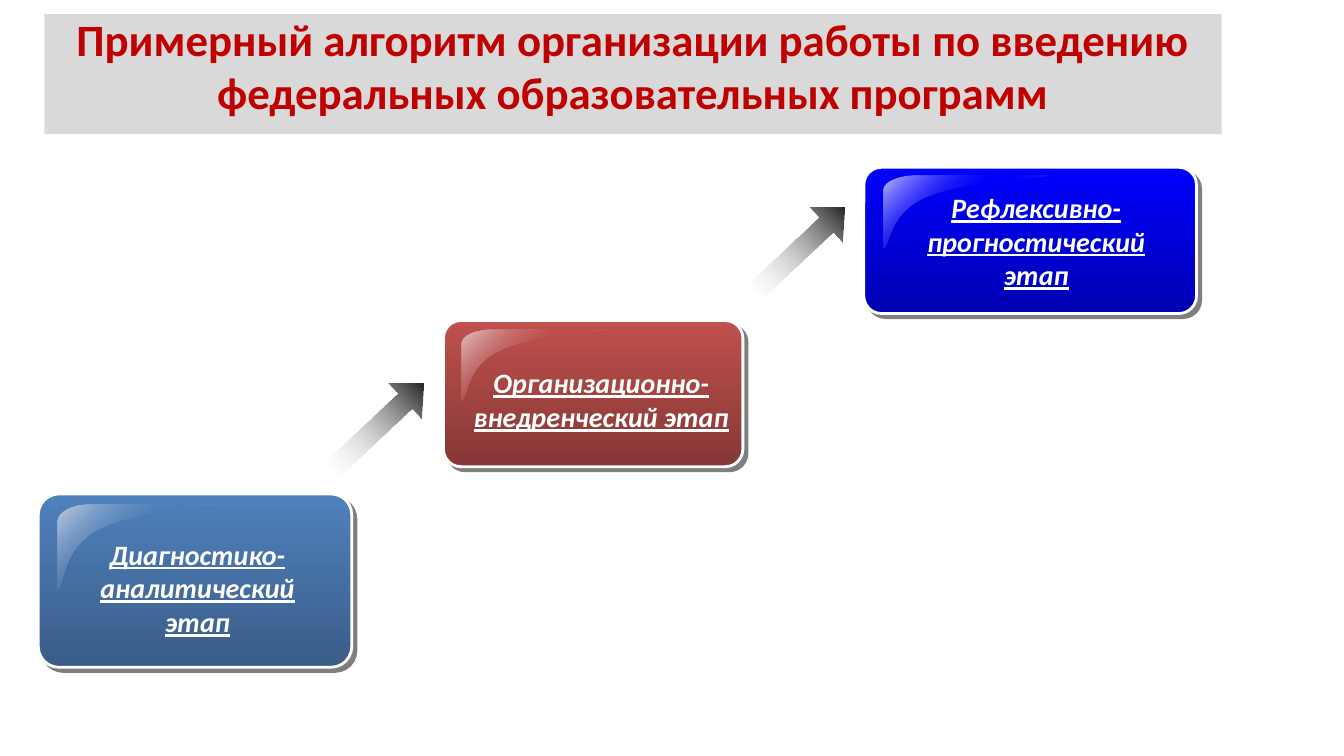
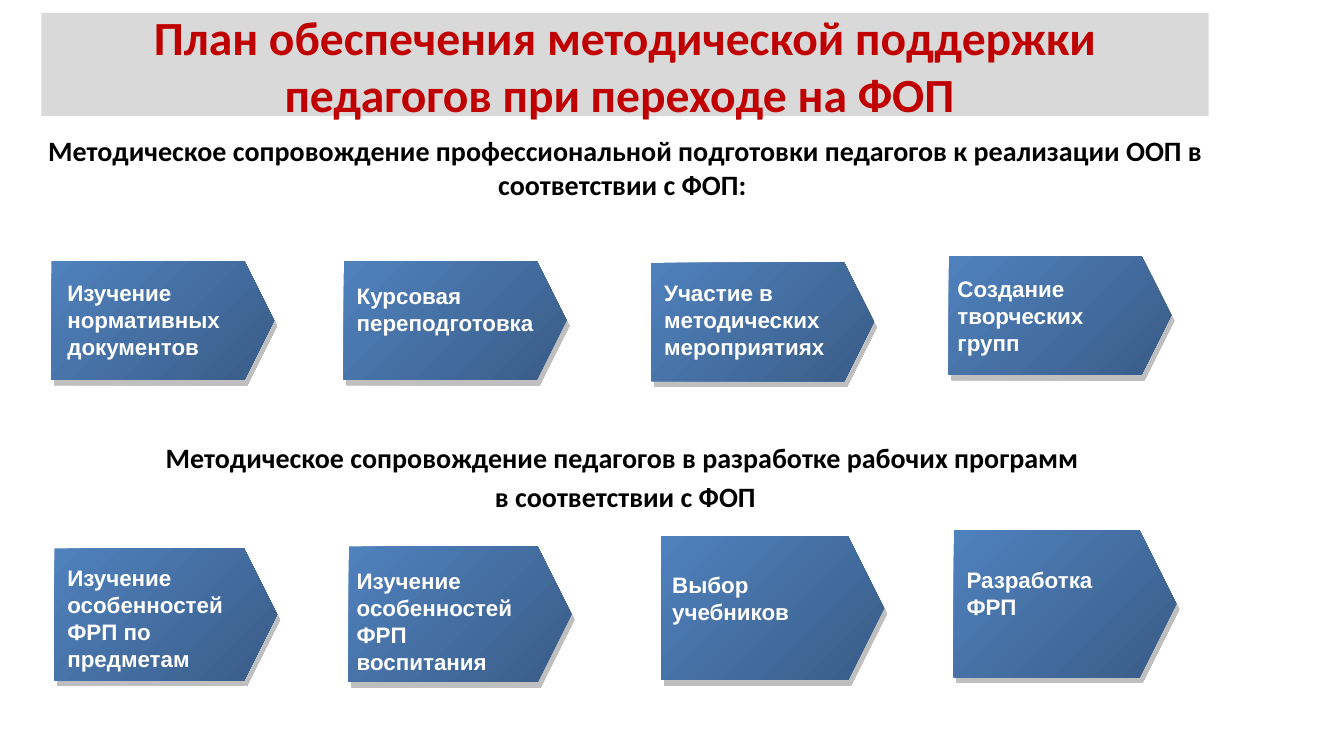
from dataclasses import dataclass
from typing import NamedTuple

from lxml.etree import SubElement
from pptx import Presentation
from pptx.dml.color import RGBColor
from pptx.enum.shapes import MSO_SHAPE
from pptx.enum.text import MSO_ANCHOR, PP_ALIGN
from pptx.oxml import parse_xml
from pptx.oxml.ns import nsdecls, qn
from pptx.util import Inches, Pt

COLORS = {
    "band": "D9D9D9", "title": "C00000", "text": "000000", "white": "FFFFFF",
    "shadow": "000000", "plate_shadow": "808080",
    "blue": "4F81BD", "blue_dark": "3A5C87", "blue_gloss": "C4CEE2",
    "red": "C0504D", "red_dark": "853836", "red_gloss": "E3C4C4",
    "pure": "0000FF", "pure_dark": "0000B2", "pure_gloss": "BFBFFF",
}
# The slide is a grid of COLS by ROWS square cells
COLS, ROWS = 133.33, 75
WIDTH, HEIGHT = Inches(13.33), Inches(7.5)


class Area(NamedTuple):
    """Place on the grid, in columns and rows."""
    col: float
    row: float
    cols: float
    rows: float

    def emu(self) -> tuple:
        return (x_at(self.col), y_at(self.row), x_at(self.cols), y_at(self.rows))


class Stop(NamedTuple):
    position: int
    color: str
    alpha: int = 100


@dataclass(frozen=True)
class TextStyle:
    size: float
    color: str
    font: str = "Calibri"
    italic: bool = False
    underline: bool = False
    shadow: bool = False
    align: PP_ALIGN = PP_ALIGN.CENTER
    gaps: tuple = ()  # space before each paragraph after the first


@dataclass(frozen=True)
class Stage:
    box: Area
    label_area: Area
    label: tuple
    color: str
    wrap: bool = True


@dataclass(frozen=True)
class Step:
    plate: Area
    label_col: float
    label_row: float
    label: str


STAGE_TEXT = TextStyle(20, "white", italic=True, underline=True, shadow=True)
HEADING_TEXT = TextStyle(20, "text", gaps=(171, 4))
STEP_TEXT = TextStyle(16, "white", font="Arial", align=PP_ALIGN.LEFT)

STAGES = (
    Stage(Area(3.8, 49, 31.1, 17.2), Area(6.2, 52.8, 26.8, 11.1),
          ("Диагностико-аналитический этап",), "blue"),
    Stage(Area(44, 31.8, 29.7, 14.5), Area(45.9, 35.8, 27.5, 7.7),
          ("Организационно-", "внедренческий этап"), "red", wrap=False),
    Stage(Area(85.7, 16.6, 33, 14.5), Area(88.2, 18.4, 29.2, 11.1),
          ("Рефлексивно-прогностический этап",), "pure"),
)
ARROWS = (Area(35.2, 36.2, 4.8, 12), Area(77, 18.7, 4.8, 12))

HEADINGS_AREA = Area(1.5, 12.8, 121.1, 62.2)
HEADINGS = (
    "Методическое сопровождение профессиональной подготовки педагогов "
    "к реализации ООП в соответствии с ФОП: ",
    "Методическое сопровождение педагогов в разработке рабочих программ ",
    "в соответствии с ФОП",
)
PLATE_COLS, LABEL_COLS = 22.1, 19.9
STEPS = (
    Step(Area(5.1, 25.9, PLATE_COLS, 11.75), 5.7, 27.2, "Изучение нормативных документов"),
    Step(Area(34.1, 25.9, PLATE_COLS, 11.75), 34.4, 27.5, "Курсовая переподготовка"),
    Step(Area(64.6, 26.05, PLATE_COLS, 11.75), 64.9, 27.2, "Участие в методических мероприятиях"),
    Step(Area(94.1, 25.4, PLATE_COLS, 11.75), 94, 26.8, "Создание творческих групп"),
    Step(Area(5.4, 54.4, PLATE_COLS, 13.1), 5.7, 55.5, "Изучение особенностей ФРП по предметам"),
    Step(Area(34.6, 54.2, PLATE_COLS, 13.45), 34.4, 55.8, "Изучение особенностей ФРП воспитания"),
    Step(Area(65.6, 53.2, PLATE_COLS, 14.25), 65.7, 56.2, "Выбор учебников"),
    Step(Area(94.6, 52.6, PLATE_COLS, 14.6), 94.9, 55.7, "Разработка ФРП"),
)

# Outline of the highlight, as shares of its own width and height:
# three points are a curve, one point is a straight side
GLOSS_START = (0.2, 0)
GLOSS_SIDES = (
    ((0.09, 0), (0, 0.09), (0, 0.2)),
    ((0, 0.98),),
    ((0.05, 1), (0.02, 0.51), (0.27, 0.29)),
    ((0.52, 0.06), (1, 0.05), (0.99, 0)),
)


def x_at(cols: float) -> int:
    return round(WIDTH * cols / COLS)


def y_at(rows: float) -> int:
    return round(HEIGHT * rows / ROWS)


def rgb(name: str) -> RGBColor:
    return RGBColor.from_string(COLORS[name])


def shadow_xml(color: str, distance: float, angle: int) -> str:
    return (f'<a:outerShdw {nsdecls("a")} blurRad="0" dist="{Pt(distance)}" '
            f'dir="{angle * 60000}" algn="ctr" rotWithShape="0">'
            f'<a:srgbClr val="{COLORS[color]}"><a:alpha val="50000"/></a:srgbClr>'
            f'</a:outerShdw>')


def gradient(shape, stops: tuple, angle: int) -> None:
    """Fill a shape with a linear gradient and remove its line and shadow."""
    shape.shadow.inherit = False
    shape.line.fill.background()
    shape.fill.background()
    marks = "".join(
        f'<a:gs pos="{stop.position * 1000}"><a:srgbClr val="{COLORS[stop.color]}">'
        f'<a:alpha val="{stop.alpha * 1000}"/></a:srgbClr></a:gs>' for stop in stops)
    properties = shape._element.spPr
    no_fill = properties.find("{*}noFill")
    properties.replace(no_fill, parse_xml(
        f'<a:gradFill {nsdecls("a")} rotWithShape="1"><a:gsLst>{marks}</a:gsLst>'
        f'<a:lin ang="{angle * 60000}" scaled="0"/></a:gradFill>'))


def add_shadow(shape, color: str, distance: float, angle: int) -> None:
    effects = shape._element.spPr.find("{*}effectLst")
    effects.append(parse_xml(shadow_xml(color, distance, angle)))


def add_text(slide, area: Area, lines: tuple, style: TextStyle, wrap: bool = True):
    holder = slide.shapes.add_textbox(*area.emu())
    frame = holder.text_frame
    frame.word_wrap = wrap
    frame.vertical_anchor = MSO_ANCHOR.TOP
    for index, line in enumerate(lines):
        paragraph = frame.paragraphs[0] if index == 0 else frame.add_paragraph()
        paragraph.text = line
        paragraph.alignment = style.align
        if index and style.gaps:
            paragraph.space_before = Pt(style.gaps[index - 1])
        font = paragraph.font
        font.name, font.size, font.bold = style.font, Pt(style.size), True
        font.italic, font.underline = style.italic, style.underline
        font.color.rgb = rgb(style.color)
        if style.shadow:
            paragraph.runs[0].font._element.append(parse_xml(
                f'<a:effectLst {nsdecls("a")}>{shadow_xml("shadow", 2, 45)}</a:effectLst>'))
    return holder


def add_title(slide, area: Area, text: str, size: float, margin_bottom: float) -> None:
    band = add_text(slide, area, (text,), TextStyle(size, "title"))
    band.fill.solid()
    band.fill.fore_color.rgb = rgb("band")
    band.text_frame.vertical_anchor = MSO_ANCHOR.MIDDLE
    band.text_frame.margin_bottom = y_at(margin_bottom)


def add_gloss(slide, box: Area, color: str) -> None:
    """Highlight in the upper left half of a box."""
    def spot(point: tuple) -> tuple:
        return (x_at(box.col + box.cols * (0.06 + 0.5 * point[0])),
                y_at(box.row + box.rows * (0.06 + 0.5 * point[1])))

    outline = slide.shapes.build_freeform(*spot(GLOSS_START), scale=1.0)
    outline.add_line_segments(
        [spot(point) for side in GLOSS_SIDES for point in side], close=True)
    gloss = outline.convert_to_shape()
    # Join the points of each curved side into one cubic segment
    segments = iter(list(gloss._element.iter(qn("a:lnTo"))))
    for side in GLOSS_SIDES:
        members = [next(segments) for _ in side]
        if len(members) == 3:
            track = members[0].getparent()
            curve = SubElement(track, qn("a:cubicBezTo"))
            members[0].addprevious(curve)
            for member in members:
                curve.append(member[0])
                track.remove(member)
    gradient(gloss, (Stop(0, f"{color}_gloss"), Stop(50, color, 0),
                     Stop(100, f"{color}_gloss")), 45)


def add_stage(slide, stage: Stage) -> None:
    box = slide.shapes.add_shape(MSO_SHAPE.ROUNDED_RECTANGLE, *stage.box.emu())
    box.adjustments[0] = 0.12
    gradient(box, (Stop(0, stage.color), Stop(100, f"{stage.color}_dark")), 90)
    box.line.color.rgb = rgb("white")
    box.line.width = Pt(2)
    add_shadow(box, "shadow", 4.2, 45)
    add_gloss(slide, stage.box, stage.color)
    add_text(slide, stage.label_area, stage.label, STAGE_TEXT, stage.wrap)


def add_arrow(slide, area: Area) -> None:
    arrow = slide.shapes.add_shape(MSO_SHAPE.UP_ARROW, *area.emu())
    arrow.adjustments[0], arrow.adjustments[1] = 0.43, 0.53
    arrow.rotation = 46.9
    gradient(arrow, (Stop(0, "shadow"), Stop(100, "white", 0)), 90)


def add_step(slide, step: Step) -> None:
    plate = slide.shapes.add_shape(MSO_SHAPE.PENTAGON, *step.plate.emu())
    plate.adjustments[0] = 0.25
    gradient(plate, (Stop(0, "blue"), Stop(100, "blue_dark")), 45)
    add_shadow(plate, "plate_shadow", 4.5, 63)
    label_area = Area(step.label_col, step.label_row, LABEL_COLS, 11)
    add_text(slide, label_area, (step.label,), STEP_TEXT)


def main() -> None:
    deck = Presentation()
    deck.slide_width, deck.slide_height = WIDTH, HEIGHT
    blank = deck.slide_layouts[6]

    # Stages of the work
    stages_slide = deck.slides.add_slide(blank)
    add_title(stages_slide, Area(4.4, 1.4, 116.8, 11.9),
              "Примерный алгоритм организации работы по введению "
              "федеральных образовательных программ", 32, 2.3)
    for stage in STAGES:
        add_stage(stages_slide, stage)
    for arrow in ARROWS:
        add_arrow(stages_slide, arrow)

    # Support plan
    plan_slide = deck.slides.add_slide(blank)
    add_title(plan_slide, Area(4.1, 1.3, 115.8, 10.2),
              "План обеспечения методической поддержки педагогов при переходе на ФОП ", 34, 0.5)
    add_text(plan_slide, HEADINGS_AREA, HEADINGS, HEADING_TEXT)
    for step in STEPS:
        add_step(plan_slide, step)

    deck.save("out.pptx")


if __name__ == "__main__":
    main()
